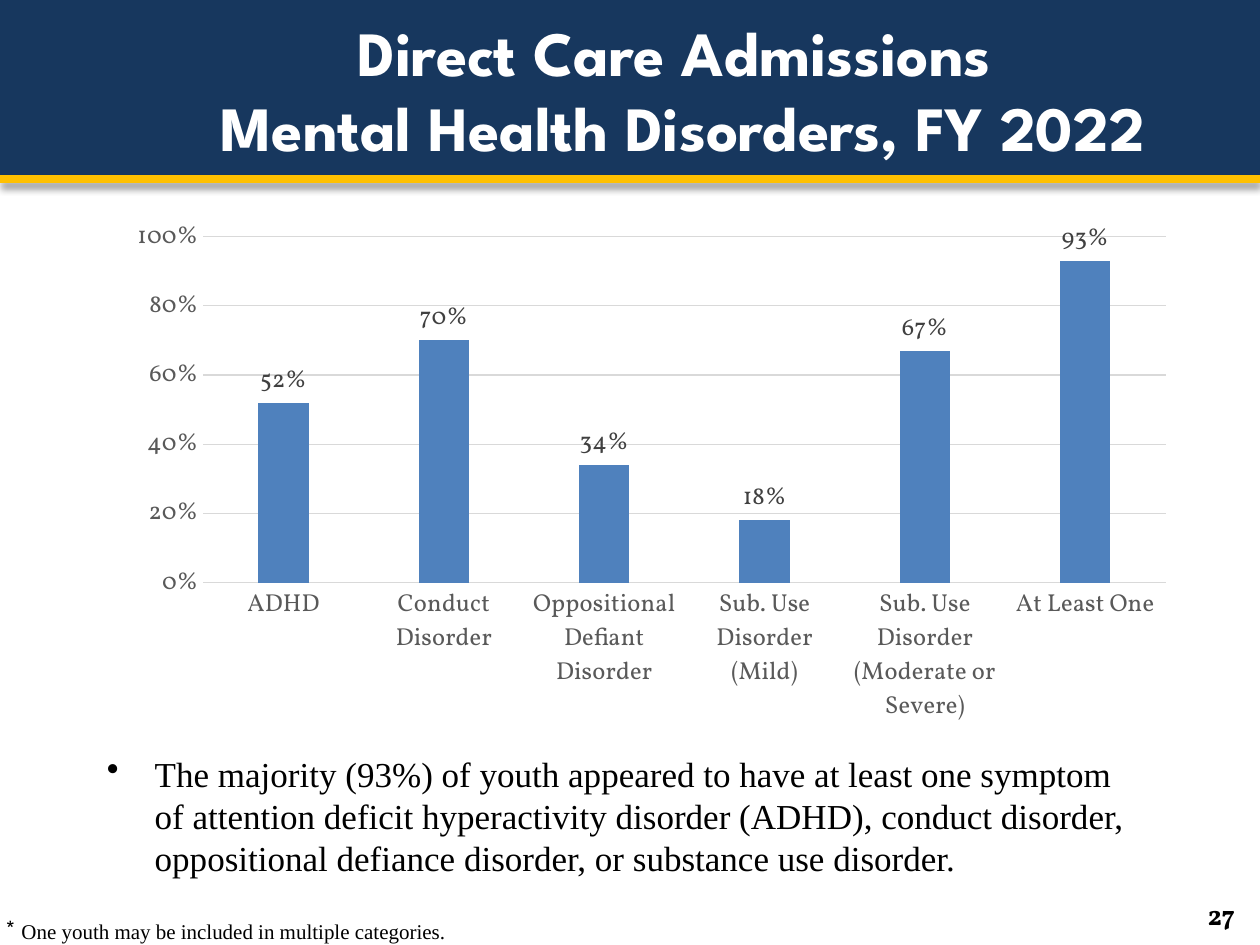
from dataclasses import dataclass

from lxml.etree import SubElement
from pptx import Presentation
from pptx.chart.data import CategoryChartData as ChartData
from pptx.dml.color import RGBColor as Color
from pptx.enum.chart import XL_CHART_TYPE as ChartType
from pptx.enum.chart import XL_LABEL_POSITION as LabelPosition
from pptx.enum.chart import XL_TICK_MARK as TickMark
from pptx.enum.shapes import MSO_CONNECTOR as Connector
from pptx.enum.shapes import MSO_SHAPE as Shape
from pptx.enum.text import MSO_ANCHOR as Anchor
from pptx.enum.text import PP_ALIGN as Align
from pptx.oxml.ns import qn
from pptx.util import Inches, Pt


@dataclass(frozen=True)
class Theme:
    navy: str = "17375E"
    gold: str = "FFC000"
    white: str = "FFFFFF"
    black: str = "000000"
    bar: str = "4F81BD"
    grid: str = "D9D9D9"
    axis_text: str = "595959"
    label_text: str = "404040"
    heading_font: str = "League Spartan"
    body_font: str = "Times New Roman"
    number_font: str = "Vollkorn"
    title_size: int = 36
    body_size: int = 20
    page_size: int = 16
    chart_size: int = 14
    note_size: int = 12


def apply(target, values):
    for name, value in values.items():
        setattr(target, name, value)


class SlideBuilder:
    """Draws styled elements on the current slide."""

    def __init__(self, slide, theme):
        self.slide = slide
        self.theme = theme

    def set_font(self, font, name, size, color, bold=False):
        apply(font, {"name": name, "size": Pt(size), "bold": bold})
        font.color.rgb = Color.from_string(color)

    def set_line(self, line, color, width):
        line.color.rgb = Color.from_string(color)
        line.width = Pt(width)

    def band(self, box, color):
        shape = self.slide.shapes.add_shape(Shape.RECTANGLE, *map(Inches, box))
        shape.shadow.inherit = False
        shape.fill.solid()
        shape.fill.fore_color.rgb = Color.from_string(color)
        shape.line.fill.background()

    def shadowed_rule(self, ends, color, width):
        rule = self.slide.shapes.add_connector(Connector.STRAIGHT, *map(Inches, ends))
        self.set_line(rule.line, color, width)
        effects = SubElement(rule._element.spPr, qn("a:effectLst"))
        shadow = SubElement(effects, qn("a:outerShdw"), blurRad=str(Pt(4)),
                            dist=str(Pt(3)), dir="5400000", rotWithShape="0")
        shade = SubElement(shadow, qn("a:srgbClr"), val=self.theme.black)
        SubElement(shade, qn("a:alpha"), val="40000")

    def text(self, box, text, font, frame_format=None, align=Align.LEFT,
             bullet=None, indent=0):
        frame = self.slide.shapes.add_textbox(*map(Inches, box)).text_frame
        apply(frame, {"word_wrap": True, **(frame_format or {})})
        paragraph = frame.paragraphs[0]
        paragraph.text = text
        paragraph.alignment = align
        if bullet:
            properties = paragraph._p.get_or_add_pPr()
            properties.set("marL", str(Inches(indent)))
            properties.set("indent", str(-Inches(indent)))
            SubElement(properties, qn("a:buChar"), char=bullet)
        for run in paragraph.runs:
            self.set_font(run.font, *font)

    def column_chart(self, box, values, color):
        theme = self.theme
        data = ChartData(number_format="0%")
        data.categories = values.keys()
        data.add_series("Series 1", values.values())
        chart = self.slide.shapes.add_chart(
            ChartType.COLUMN_CLUSTERED, *map(Inches, box), data).chart
        apply(chart, {"has_legend": False, "has_title": False})
        self.set_font(chart.font, theme.number_font, theme.chart_size, theme.black)

        plot = chart.plots[0]
        apply(plot, {"gap_width": 219, "overlap": -27,
                     "vary_by_categories": False, "has_data_labels": True})
        fill = plot.series[0].format.fill
        fill.solid()
        fill.fore_color.rgb = Color.from_string(color)
        apply(plot.data_labels, {"show_value": True, "number_format": "0%",
                                 "number_format_is_linked": False,
                                 "position": LabelPosition.OUTSIDE_END})
        self.set_font(plot.data_labels.font, theme.number_font,
                      theme.chart_size, theme.label_text)

        for axis in (chart.category_axis, chart.value_axis):
            apply(axis, {"major_tick_mark": TickMark.NONE,
                         "minor_tick_mark": TickMark.NONE})
            self.set_font(axis.tick_labels.font, theme.number_font,
                          theme.chart_size, theme.axis_text)
        self.set_line(chart.category_axis.format.line, theme.grid, 0.75)
        axis = chart.value_axis
        apply(axis, {"minimum_scale": 0, "maximum_scale": 1, "major_unit": 0.2,
                     "has_major_gridlines": True})
        apply(axis.tick_labels, {"number_format": "0%",
                                 "number_format_is_linked": False})
        axis.format.line.fill.background()
        self.set_line(axis.major_gridlines.format.line, theme.grid, 0.75)


def main():
    presentation = Presentation()
    apply(presentation, {"slide_width": Inches(10), "slide_height": Inches(7.5)})
    theme = Theme()
    builder = SlideBuilder(
        presentation.slides.add_slide(presentation.slide_layouts[6]), theme)

    builder.band((0, 0, 10, 1.42), theme.navy)
    builder.shadowed_rule((0, 1.42, 10, 1.42), theme.gold, 4.5)
    builder.text((9.32, 7.05, 0.58, 0.42), "27",
                 (theme.number_font, theme.page_size, theme.black, True),
                 {"vertical_anchor": Anchor.MIDDLE}, Align.RIGHT)
    builder.text((1.42, 0.08, 8, 1.25),
                 "Direct Care Admissions \vMental Health Disorders, FY 2022",
                 (theme.heading_font, theme.title_size, theme.white, True),
                 {"vertical_anchor": Anchor.MIDDLE}, Align.CENTER)
    builder.text((0, 7, 9.08, 0.49),
                 "One youth may be included in multiple categories.",
                 (theme.body_font, theme.note_size, theme.black),
                 {"vertical_anchor": Anchor.BOTTOM, "margin_left": Inches(0.05),
                  "margin_top": 0, "margin_bottom": 0},
                 bullet="*", indent=0.12)
    builder.text((0.75, 5.92, 8.33, 1.24),
                 "The majority (93%) of youth appeared to have at least one symptom "
                 "of attention deficit hyperactivity disorder (ADHD), conduct disorder, "
                 "oppositional defiance disorder, or substance use disorder.",
                 (theme.body_font, theme.body_size, theme.black),
                 bullet="•", indent=0.38)
    builder.column_chart((0.92, 1.66, 8.5, 4.17), {
        "ADHD": 0.52,
        "Conduct Disorder": 0.7,
        "Oppositional Defiant Disorder": 0.34,
        "Sub. Use Disorder (Mild)": 0.18,
        "Sub. Use Disorder (Moderate or Severe)": 0.67,
        "At Least One": 0.93,
    }, theme.bar)
    presentation.save("out.pptx")


if __name__ == "__main__":
    main()
